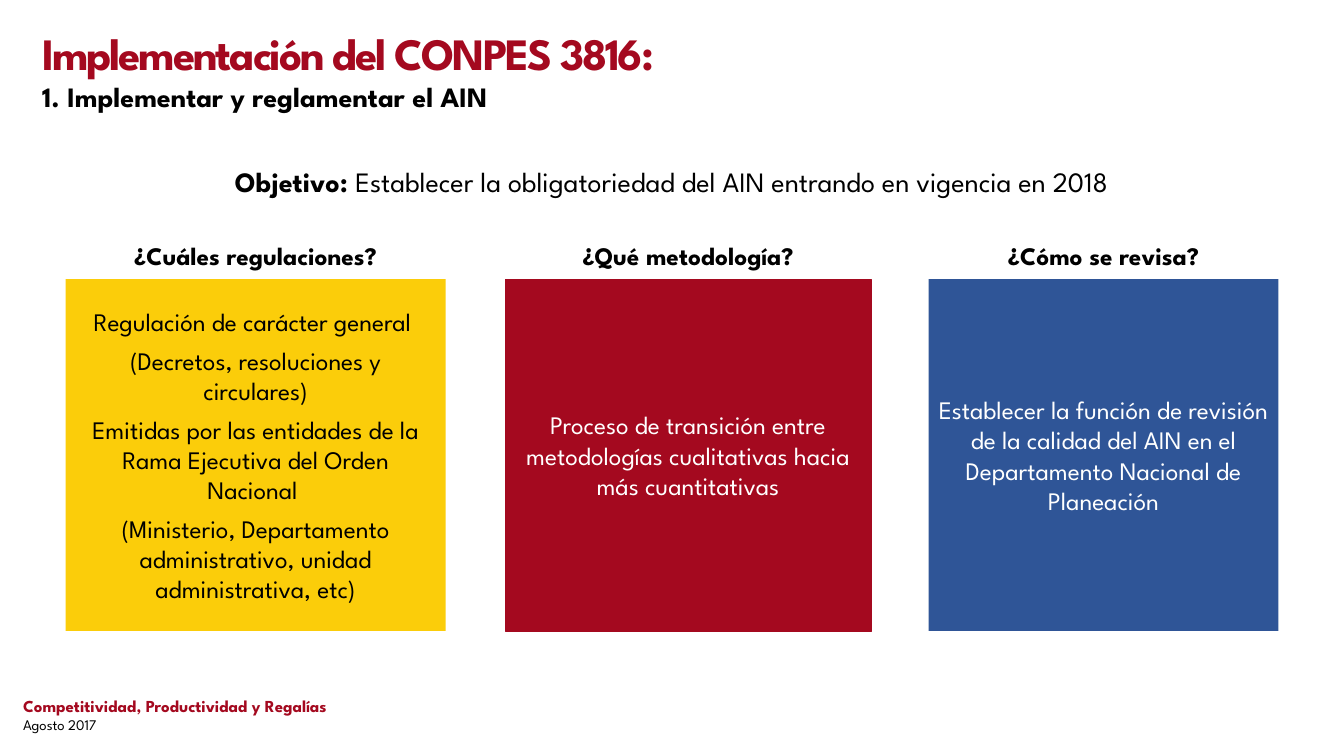
"""Build the slide on implementing the AIN under CONPES 3816."""

from dataclasses import dataclass

from pptx import Presentation
from pptx.dml.color import RGBColor
from pptx.enum.shapes import MSO_SHAPE
from pptx.enum.text import MSO_ANCHOR, PP_ALIGN
from pptx.shapes.autoshape import Shape
from pptx.slide import Slide
from pptx.util import Emu, Inches, Pt

RECTANGLE = MSO_SHAPE.RECTANGLE
TOP, MIDDLE = MSO_ANCHOR.TOP, MSO_ANCHOR.MIDDLE
LEFT, CENTER = PP_ALIGN.LEFT, PP_ALIGN.CENTER

FONT = "League Spartan"
COLORS = {
    "red": "A4091F",
    "yellow": "FBCD0A",
    "blue": "2F5597",
    "black": "000000",
    "white": "FFFFFF",
}
SLIDE_WIDTH, SLIDE_HEIGHT = Inches(13.33), Inches(7.5)
CARD_TOP, CARD_HEIGHT = 36.93, 46.53
HEADING_TOP, HEADING_HEIGHT = 31.1, 5.33


@dataclass(frozen=True)
class Area:
    """A rectangle in percent of the slide's width and height."""

    left: float
    top: float
    width: float
    height: float

    def lengths(self) -> tuple[Emu, Emu, Emu, Emu]:
        """Convert the shares to slide lengths."""
        return (
            Emu(round(SLIDE_WIDTH * self.left / 100)),
            Emu(round(SLIDE_HEIGHT * self.top / 100)),
            Emu(round(SLIDE_WIDTH * self.width / 100)),
            Emu(round(SLIDE_HEIGHT * self.height / 100)),
        )


@dataclass(frozen=True)
class Span:
    """A stretch of text in one style."""

    text: str
    size: float = 18
    color: str = "black"
    bold: bool = False
    tracking: float = 0


@dataclass(frozen=True)
class TextBlock:
    """A text box holding paragraphs made of spans."""

    area: Area
    paragraphs: tuple[tuple[Span, ...], ...]
    align: PP_ALIGN = LEFT
    anchor: MSO_ANCHOR = TOP
    inset: float | None = None
    line_spacing: float | None = None


@dataclass(frozen=True)
class Column:
    """A coloured card with a heading centred above it."""

    left: float
    width: float
    heading: str
    heading_width: float
    fill: str
    text_color: str
    paragraphs: tuple[str, ...]
    outlined: bool = False


TEXT_BLOCKS = (
    TextBlock(
        Area(0.98, 90.67, 68.64, 7.33),
        (
            (Span("Competitividad, Productividad y Regalías", 12, "red", True),),
            (Span("Agosto 2017", 10.5),),
        ),
        inset=0.1,
    ),
    TextBlock(
        Area(2.4, 2.8, 95.27, 8.13),
        ((Span("Implementación del CONPES 3816:", 32, "red", True, -1.5),),),
    ),
    TextBlock(
        Area(2.4, 10.4, 95.27, 5.2),
        ((Span("1. Implementar y reglamentar el AIN", 20, bold=True),),),
        line_spacing=0.9,
    ),
    TextBlock(
        Area(5.7, 21.07, 88.6, 5.87),
        (
            (
                Span("Objetivo: ", 20, bold=True),
                Span("Establecer la obligatoriedad del AIN entrando en vigencia en 2018", 20),
            ),
        ),
        CENTER,
    ),
)

COLUMNS = (
    Column(
        4.88, 28.28, "¿Cuáles regulaciones?", 29.93, "yellow", "black",
        (
            "Regulación de carácter general ",
            "(Decretos, resoluciones y circulares)",
            "Emitidas por las entidades de la Rama Ejecutiva del Orden Nacional ",
            "(Ministerio, Departamento administrativo, unidad administrativa, etc)",
        ),
    ),
    Column(
        37.58, 27.23, "¿Qué metodología?", 24.31, "red", "white",
        ("Proceso de transición entre metodologías cualitativas hacia más cuantitativas",),
        outlined=True,
    ),
    Column(
        69.09, 26.03, "¿Cómo se revisa?", 24.31, "blue", "white",
        (
            "Establecer la función de revisión de la calidad del AIN en el "
            "Departamento Nacional de Planeación",
        ),
    ),
)


def rgb(name: str) -> RGBColor:
    """Look up a named colour."""
    return RGBColor.from_string(COLORS[name])


def write_text(shape: Shape, block: TextBlock) -> None:
    """Fill a shape with the block's paragraphs and format them."""
    frame = shape.text_frame
    frame.word_wrap = True
    frame.vertical_anchor = block.anchor
    if block.inset is not None:
        frame.margin_left = frame.margin_right = Inches(block.inset)
        frame.margin_top = frame.margin_bottom = Inches(block.inset)
    for index, spans in enumerate(block.paragraphs):
        paragraph = frame.add_paragraph() if index else frame.paragraphs[0]
        paragraph.alignment = block.align
        if block.line_spacing:
            paragraph.line_spacing = block.line_spacing
        if index and block.align == CENTER:
            paragraph.space_before = Pt(6)
        for span in spans:
            run = paragraph.add_run()
            run.text = span.text
            run.font.name = FONT
            run.font.size = Pt(span.size)
            run.font.bold = span.bold
            run.font.color.rgb = rgb(span.color)
            if span.tracking:
                run.font._element.set("spc", str(round(span.tracking * 100)))


def draw_text(slide: Slide, block: TextBlock) -> None:
    """Add a text box for the block."""
    write_text(slide.shapes.add_textbox(*block.area.lengths()), block)


def draw_column(slide: Slide, column: Column) -> None:
    """Add a card and its heading."""
    area = Area(column.left, CARD_TOP, column.width, CARD_HEIGHT)
    card = slide.shapes.add_shape(RECTANGLE, *area.lengths())
    card.shadow.inherit = False
    card.fill.solid()
    card.fill.fore_color.rgb = rgb(column.fill)
    if column.outlined:
        card.line.color.rgb = rgb(column.fill)
        card.line.width = Pt(0.5)
    else:
        card.line.fill.background()
    paragraphs = tuple((Span(text, color=column.text_color),) for text in column.paragraphs)
    write_text(card, TextBlock(area, paragraphs, CENTER, MIDDLE))

    heading_left = column.left + (column.width - column.heading_width) / 2
    heading_area = Area(heading_left, HEADING_TOP, column.heading_width, HEADING_HEIGHT)
    heading = ((Span(column.heading, bold=True),),)
    draw_text(slide, TextBlock(heading_area, heading, CENTER, MIDDLE))


def main() -> None:
    """Create and save the presentation."""
    presentation = Presentation()
    presentation.slide_width, presentation.slide_height = SLIDE_WIDTH, SLIDE_HEIGHT
    slide = presentation.slides.add_slide(presentation.slide_layouts[6])
    for block in TEXT_BLOCKS:
        draw_text(slide, block)
    for column in COLUMNS:
        draw_column(slide, column)
    presentation.save("out.pptx")


if __name__ == "__main__":
    main()
